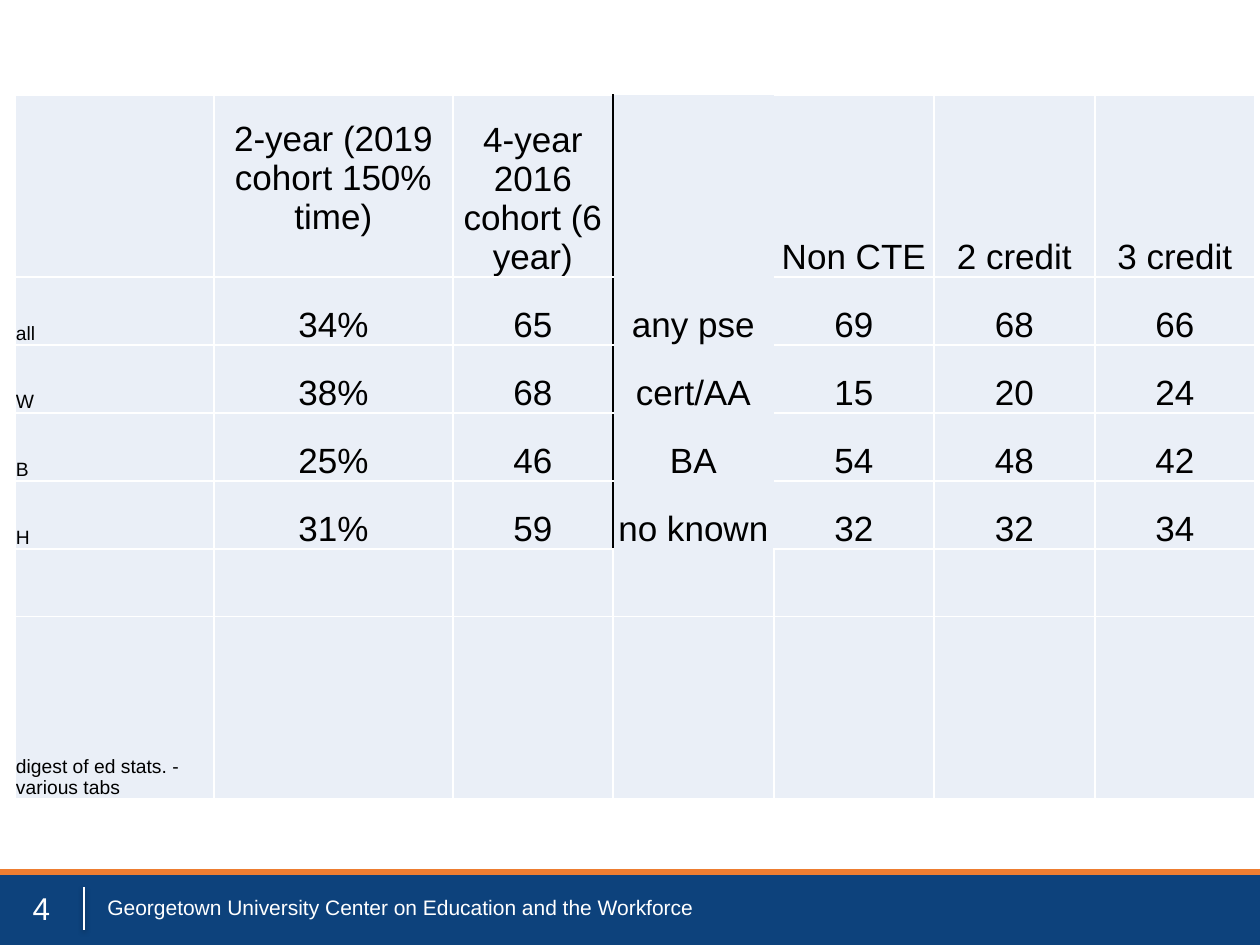
from lxml import etree
from pptx import Presentation
from pptx.dml.color import RGBColor
from pptx.enum import shapes, text
from pptx.oxml import parse_xml
from pptx.oxml.ns import nsdecls, qn
from pptx.util import Emu, Pt

PX = 914400 // 126
THEME = {
    "font": "Arial",
    "navy": "0D427C", "orange": "ED7D31", "cell": "EAEFF7",
    "white": "FFFFFF", "black": "000000",
    "big": 20, "number": 18, "footer": 12, "small": 11,
}


def add_run(p, words, size, color):
    r = p.add_run()
    r.text = words
    r.font.name = THEME["font"]
    r.font.size = Pt(THEME[size])
    r.font.color.rgb = RGBColor.from_string(THEME[color])


def set_effect(sp, alpha=0, dist=0):
    """Give a shape a soft downward shadow, or none when alpha is 0."""
    effects = etree.SubElement(sp._element.spPr, qn("a:effectLst"))
    if alpha:
        effects.append(parse_xml(
            f'<a:outerShdw {nsdecls("a")} blurRad="{Pt(3.1)}" dist="{Pt(dist)}" '
            f'dir="5400000" rotWithShape="0"><a:srgbClr val="{THEME["black"]}">'
            f'<a:alpha val="{alpha * 1000}"/></a:srgbClr></a:outerShdw>'))


prs = Presentation()
prs.slide_width, prs.slide_height = Emu(1260 * PX), Emu(945 * PX)
s = prs.slides.add_slide(prs.slide_layouts[6])

# Footer band
band = s.shapes.add_shape(shapes.MSO_SHAPE.RECTANGLE, 0, 872 * PX, 1260 * PX, 73 * PX)
band.fill.solid()
band.fill.fore_color.rgb = RGBColor.from_string(THEME["navy"])
band.line.fill.background()
set_effect(band, 35, 1.8)

# Footer divider and top rule
for x1, y1, x2, y2, color, width, alpha in [
    (84, 887, 84, 930, "white", 1, 38),
    (0, 872, 1260, 872, "orange", 3, 0),
]:
    rule = s.shapes.add_connector(shapes.MSO_CONNECTOR.STRAIGHT,
                                  x1 * PX, y1 * PX, x2 * PX, y2 * PX)
    rule.line.color.rgb = RGBColor.from_string(THEME[color])
    rule.line.width = Pt(width)
    set_effect(rule, alpha, 1.6)

# Footer text and slide number
for x, y, w, words, size, align, anchor in [
    (95, 882, 693, "Georgetown University Center on Education and the Workforce",
     "footer", text.PP_ALIGN.LEFT, text.MSO_ANCHOR.MIDDLE),
    (10, 883, 63, "4", "number", text.PP_ALIGN.CENTER, text.MSO_ANCHOR.TOP),
]:
    tf = s.shapes.add_textbox(x * PX, y * PX, w * PX, 50 * PX).text_frame
    tf.word_wrap = True
    tf.vertical_anchor = anchor
    p = tf.paragraphs[0]
    p.alignment = align
    add_run(p, words, size, "white")

# Completion table
ROWS = [
    ["", "2-year (2019 cohort 150% time)", "4-year 2016 cohort (6 year)", "",
     "Non CTE", "2 credit", "3 credit"],
    ["all", "34%", "65", "any pse", "69", "68", "66"],
    ["W", "38%", "68", "cert/AA", "15", "20", "24"],
    ["B", "25%", "46", "BA", "54", "48", "42"],
    ["H", "31%", "59", "no known", "32", "32", "34"],
    [""] * 7,
    ["digest of ed stats. - various tabs"] + [""] * 6,
]
COLS = [199, 239, 160, 161, 160, 161, 160]
HEIGHTS = [182, 68, 68, 68, 68, 68, 182]
LABEL_COL, LAST_DATA_ROW = 3, 4

table = s.shapes.add_table(len(ROWS), len(COLS), 15 * PX, 95 * PX,
                           sum(COLS) * PX, sum(HEIGHTS) * PX).table
table.first_row = table.horz_banding = False
for col, width in zip(table.columns, COLS):
    col.width = Emu(width * PX)
for row, height in zip(table.rows, HEIGHTS):
    row.height = Emu(height * PX)

for i, row in enumerate(ROWS):
    for j, words in enumerate(row):
        cell = table.cell(i, j)
        cell.vertical_anchor = text.MSO_ANCHOR.BOTTOM
        cell.margin_left = cell.margin_right = cell.margin_top = PX
        # The 2-year heading sits one line above the others
        cell.margin_bottom = 40 * PX if (i, j) == (0, 1) else 0

        # White grid; the label column is open, with a black rule on its left
        borders = dict.fromkeys("LRTB", "white")
        if i <= LAST_DATA_ROW:
            if j == LABEL_COL - 1:
                borders["R"] = "black"
            elif j == LABEL_COL:
                borders = {"L": "black"}
            elif j == LABEL_COL + 1:
                del borders["L"]
        elif i == LAST_DATA_ROW + 1 and j == LABEL_COL:
            del borders["T"]
        tcPr = cell._tc.get_or_add_tcPr()
        for side in "LRTB":
            ln = etree.SubElement(tcPr, qn(f"a:ln{side}"), w=str(Pt(1)))
            if side in borders:
                paint = etree.SubElement(ln, qn("a:solidFill"))
                etree.SubElement(paint, qn("a:srgbClr"), val=THEME[borders[side]])
            else:
                etree.SubElement(ln, qn("a:noFill"))
        cell.fill.solid()
        cell.fill.fore_color.rgb = RGBColor.from_string(THEME["cell"])

        if words:
            p = cell.text_frame.paragraphs[0]
            p.alignment = text.PP_ALIGN.CENTER if j else text.PP_ALIGN.LEFT
            add_run(p, words, "big" if j else "small", "black")

prs.save("out.pptx")
